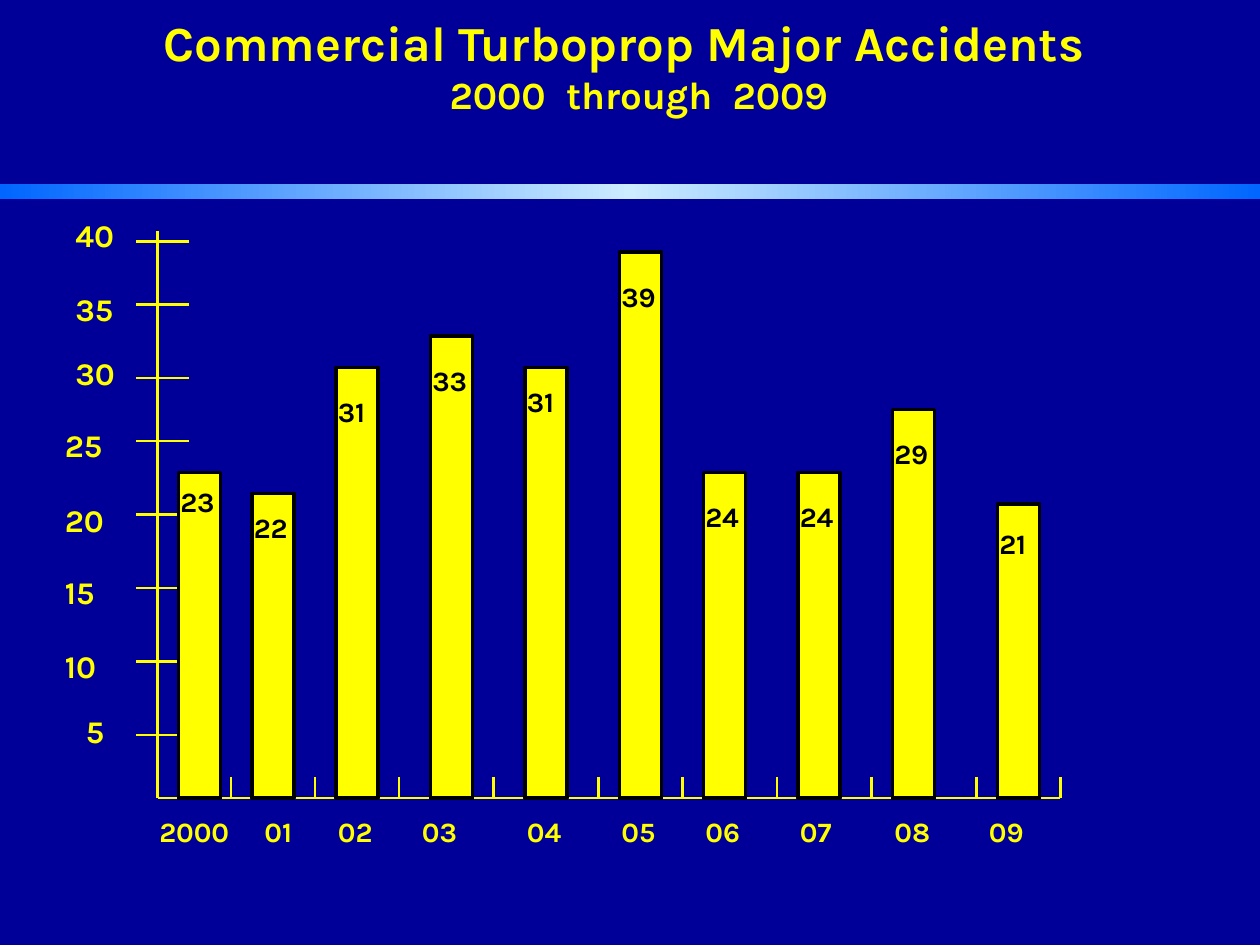
from copy import deepcopy
from typing import NamedTuple

from pptx import Presentation
from pptx.dml.color import RGBColor
from pptx.enum.shapes import MSO_CONNECTOR as Conn, MSO_SHAPE as Shape
from pptx.enum.text import MSO_ANCHOR as Anchor, MSO_AUTO_SIZE as Fit, PP_ALIGN as Align
from pptx.oxml.ns import qn
from pptx.oxml.xmlchemy import OxmlElement as Node
from pptx.util import Pt

NAVY, YELLOW, BLACK = "000099", "FFFF00", "000000"
BLUE, PALE = "0066FF", "CCECFF"
FONT = "Karla"
LEFT, RIGHT, TOP, BASE = 90, 606, 132, 456  # plot edges
BAR_W, TICK = 24, 12
YEAR_Y = 462


class Bar(NamedTuple):
    year: str
    value: int
    x: float
    top: float
    text_y: float
    year_x: float
    year_w: float
    tick_x: float  # tick that closes the year


class Step(NamedTuple):
    value: int
    tick_y: float
    x: float
    y: float
    w: float


BARS = [
    Bar("2000", 23, 102, 270, 273.5, 84, 66, 132),
    Bar("01", 22, 144, 282, 288, 144, 36, 180),
    Bar("02", 31, 192, 210, 222, 186, 36, 228),
    Bar("03", 33, 246, 192, 204, 234, 42, 282),
    Bar("04", 31, 300, 210, 216, 294, 36, 342),
    Bar("05", 39, 354, 144, 156, 348, 36, 390),
    Bar("06", 24, 402, 270, 282, 396, 36, 444),
    Bar("07", 24, 456, 270, 282, 450, 36, 498),
    Bar("08", 29, 510, 234, 246, 504, 42, 558),
    Bar("09", 21, 570, 288, 297.5, 558, 36, RIGHT),
]
STEPS = [
    Step(5, 420, 42, 403.5, 36),
    Step(10, 378, 30, 366, 42),
    Step(15, 336, 30, 324, 42),
    Step(20, 294, 30, 283, 42),
    Step(25, 252, 30, 240, 42),
    Step(30, 216, 36, 199, 42),
    Step(35, 174, 36, 162, 42),
    Step(40, 138, 36, 120, 42),
]


def rgb(code: str) -> RGBColor:
    return RGBColor.from_string(code)


def style(run, size: float, color: str) -> None:
    look = {"name": FONT, "size": Pt(size), "bold": True}
    for key, val in look.items():
        setattr(run.font, key, val)
    run.font.color.rgb = rgb(color)


def label(slide, text: str, x: float, y: float, w: float, size: float, color: str) -> None:
    box = slide.shapes.add_textbox(Pt(x), Pt(y), Pt(w), Pt(size * 1.2 + 7.2))
    frame = box.text_frame
    frame.word_wrap = True
    frame.auto_size = Fit.SHAPE_TO_FIT_TEXT
    run = frame.paragraphs[0].add_run()
    run.text = text
    style(run, size, color)


def line(slide, x1: float, y1: float, x2: float, y2: float) -> None:
    rule = slide.shapes.add_connector(Conn.STRAIGHT, Pt(x1), Pt(y1), Pt(x2), Pt(y2))
    rule.line.color.rgb = rgb(YELLOW)
    rule.line.width = Pt(1.5)
    rule._element.spPr.append(Node("a:effectLst"))


def rect(slide, x: float, y: float, w: float, h: float):
    shape = slide.shapes.add_shape(Shape.RECTANGLE, Pt(x), Pt(y), Pt(w), Pt(h))
    shape.shadow.inherit = False
    return shape


def head(slide) -> None:
    title = slide.shapes.title
    place = {"left": 0, "top": 3.5, "width": 720, "height": 68}
    for key, val in place.items():
        setattr(title, key, Pt(val))
    frame = title.text_frame
    frame.word_wrap = True
    frame.auto_size = Fit.SHAPE_TO_FIT_TEXT
    frame.vertical_anchor = Anchor.TOP
    # Each row: words, size, margin that shifts it off centre
    rows = [
        (["Commercial Turboprop Major Accidents"], 28, ("marR", 7)),
        (["2000", " ", "through", " ", "2009"], 22, ("marL", 17)),
    ]
    for num, (words, size, (side, gap)) in enumerate(rows):
        para = frame.add_paragraph() if num else frame.paragraphs[0]
        para.alignment = Align.CENTER
        para._p.get_or_add_pPr().set(side, str(Pt(gap)))
        for word in words:
            run = para.add_run()
            run.text = word
            style(run, size, YELLOW)
            if word == " ":  # wide word gap
                run._r.get_or_add_rPr().set("spc", "600")


def band(slide) -> None:
    shape = rect(slide, 0, 105, 720, 9)
    shape.line.fill.background()
    fill = shape.fill
    fill.gradient()
    fill.gradient_angle = 0
    stops = shape._element.spPr.find(qn("a:gradFill")).find(qn("a:gsLst"))
    stops.append(deepcopy(stops[0]))
    for stop, pos, color in zip(fill.gradient_stops, (0, 0.5, 1), (BLUE, PALE, BLUE)):
        stop.position = pos
        stop.color.rgb = rgb(color)


def axes(slide) -> None:
    line(slide, LEFT, TOP, LEFT, BASE)
    line(slide, RIGHT, BASE, LEFT, BASE)
    for step in STEPS:
        line(slide, LEFT + 18, step.tick_y, LEFT - TICK, step.tick_y)
        label(slide, str(step.value), step.x, step.y, step.w, 18, YELLOW)
    for bar in BARS:
        line(slide, bar.tick_x, BASE - TICK, bar.tick_x, BASE)
        label(slide, bar.year, bar.year_x, YEAR_Y, bar.year_w, 16, YELLOW)


def bars(slide) -> None:
    for bar in BARS:
        shape = rect(slide, bar.x, bar.top, BAR_W, BASE - bar.top)
        shape.fill.solid()
        shape.fill.fore_color.rgb = rgb(YELLOW)
        shape.line.color.rgb = rgb(BLACK)
        shape.line.width = Pt(2)
        label(slide, str(bar.value), bar.x - 6, bar.text_y, BAR_W + 12, 16, BLACK)


def main() -> None:
    deck = Presentation()
    deck.slide_width, deck.slide_height = Pt(720), Pt(540)
    slide = deck.slides.add_slide(deck.slide_layouts[5])  # title only
    back = slide.background.fill
    back.solid()
    back.fore_color.rgb = rgb(NAVY)
    for draw in (head, band, axes, bars):
        draw(slide)
    deck.save("out.pptx")


if __name__ == "__main__":
    main()
